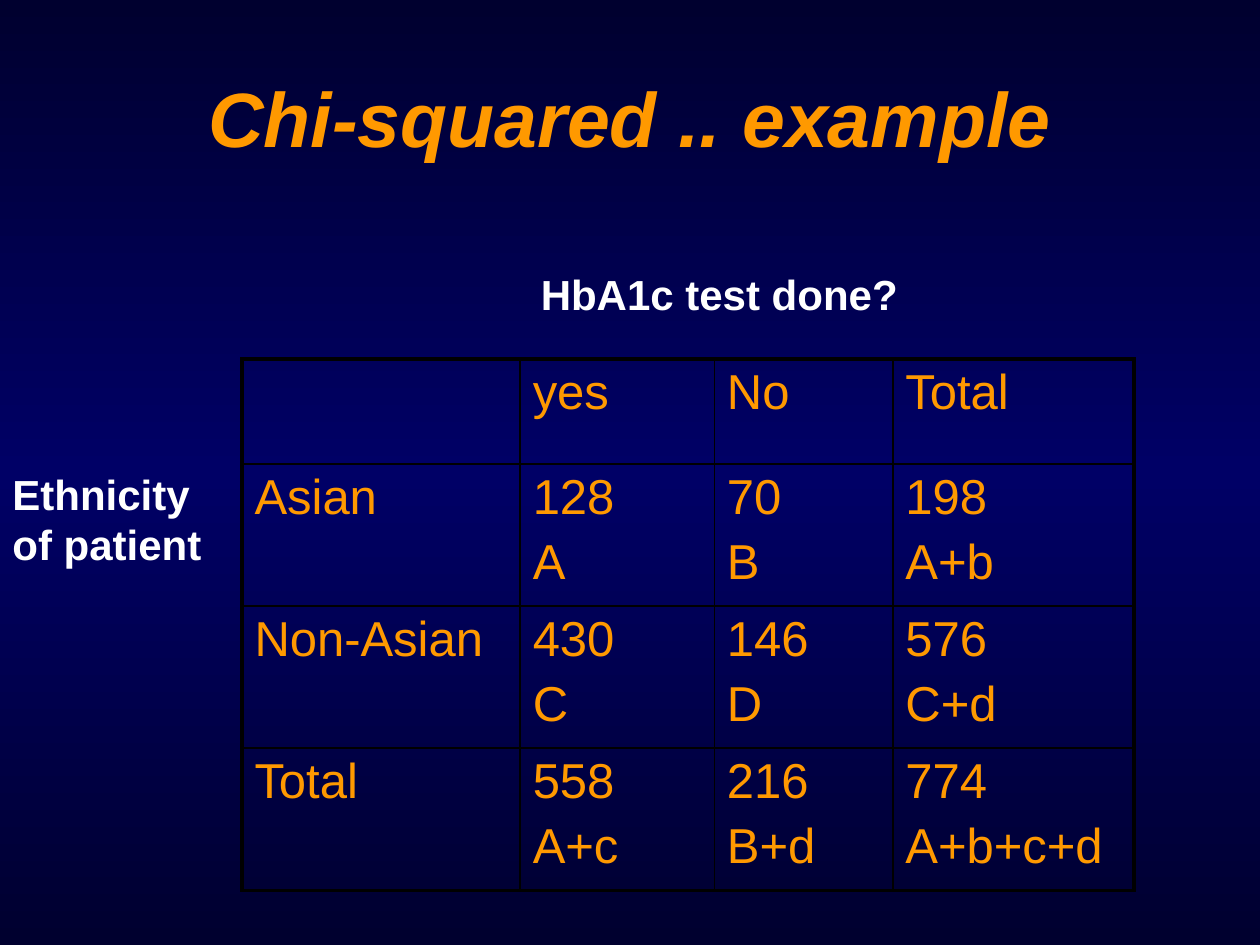
from copy import deepcopy
from dataclasses import dataclass

from lxml.etree import SubElement
from pptx import Presentation
from pptx.dml.color import RGBColor
from pptx.enum.text import MSO_ANCHOR, MSO_AUTO_SIZE, PP_ALIGN
from pptx.oxml.ns import qn
from pptx.slide import Slide
from pptx.table import _Cell
from pptx.text.text import _Paragraph
from pptx.util import Pt


@dataclass(frozen=True)
class TextStyle:
    size: float
    color: str
    bold: bool = False
    italic: bool = False


@dataclass(frozen=True)
class Theme:
    font: str = "Arial"
    title: TextStyle = TextStyle(44, "FF9900", True, True)
    cell: TextStyle = TextStyle(28, "FF9900")
    label: TextStyle = TextStyle(24, "FFFFFF", True)
    edge: str = "00002F"
    middle: str = "000066"
    border: str = "000000"
    outer_border: float = 2.25
    inner_border: float = 1
    letter_gap: float = 5.6


@dataclass(frozen=True)
class Box:
    left: float
    top: float
    width: float
    height: float


@dataclass(frozen=True)
class AxisLabel:
    text: str
    box: Box
    align: PP_ALIGN


THEME = Theme()
TITLE_BOX = Box(36, 21.6, 648, 90)
TABLE_BOX = Box(138.24, 205.2, 509.8, 303.6)
COLUMN_WIDTHS = (159, 111, 102, 137.8)
ROW_HEIGHTS = (60, 81.2, 81.2, 81.2)
COUNTS = (
    ((), ("yes",), ("No",), ("Total",)),
    (("Asian",), ("128", "A"), ("70", "B"), ("198", "A+b")),
    (("Non-Asian",), ("430", "C"), ("146", "D"), ("576", "C+d")),
    (("Total",), ("558", "A+c"), ("216", "B+d"), ("774", "A+b+c+d")),
)
AXIS_LABELS = (
    AxisLabel("HbA1c test done?", Box(276, 150, 270, 36), PP_ALIGN.CENTER),
    AxisLabel("Ethnicity of patient", Box(0, 264, 126, 65), PP_ALIGN.LEFT),
)


def add_run(paragraph: _Paragraph, text: str, style: TextStyle) -> None:
    run = paragraph.add_run()
    run.text = text
    run.font.name = THEME.font
    run.font.size = Pt(style.size)
    run.font.bold = style.bold
    run.font.italic = style.italic
    run.font.color.rgb = RGBColor.from_string(style.color)


def paint_background(slide: Slide) -> None:
    fill = slide.background.fill
    fill.gradient()
    fill.gradient_angle = 90
    stop_list = next(slide.element.iter(qn("a:gsLst")))
    stop_list.append(deepcopy(stop_list[0]))
    colors = (THEME.edge, THEME.middle, THEME.edge)
    for stop, position, color in zip(fill.gradient_stops, (0, 0.5, 1), colors):
        stop.position = position
        stop.color.rgb = RGBColor.from_string(color)


def add_title(slide: Slide, text: str) -> None:
    title = slide.shapes.title
    title.left, title.top = Pt(TITLE_BOX.left), Pt(TITLE_BOX.top)
    title.width, title.height = Pt(TITLE_BOX.width), Pt(TITLE_BOX.height)
    title.text_frame.vertical_anchor = MSO_ANCHOR.MIDDLE
    paragraph = title.text_frame.paragraphs[0]
    paragraph.alignment = PP_ALIGN.CENTER
    add_run(paragraph, text, THEME.title)


def add_axis_label(slide: Slide, label: AxisLabel) -> None:
    box = label.box
    frame = slide.shapes.add_textbox(
        Pt(box.left), Pt(box.top), Pt(box.width), Pt(box.height)
    ).text_frame
    frame.word_wrap = True
    frame.auto_size = MSO_AUTO_SIZE.SHAPE_TO_FIT_TEXT
    frame.paragraphs[0].alignment = label.align
    add_run(frame.paragraphs[0], label.text, THEME.label)


def draw_borders(cell: _Cell, row: int, column: int) -> None:
    outer_sides = {
        "a:lnL": column == 0,
        "a:lnR": column == len(COLUMN_WIDTHS) - 1,
        "a:lnT": row == 0,
        "a:lnB": row == len(ROW_HEIGHTS) - 1,
    }
    properties = cell._tc.get_or_add_tcPr()
    for side, is_outer in outer_sides.items():
        width = THEME.outer_border if is_outer else THEME.inner_border
        line = SubElement(properties, qn(side), w=str(int(Pt(width))))
        solid = SubElement(line, qn("a:solidFill"))
        SubElement(solid, qn("a:srgbClr"), val=THEME.border)


def fill_cell(cell: _Cell, entries: tuple[str, ...]) -> None:
    frame = cell.text_frame
    for index, entry in enumerate(entries):
        paragraph = frame.add_paragraph() if index else frame.paragraphs[0]
        if index:
            paragraph.space_before = Pt(THEME.letter_gap)
        add_run(paragraph, entry, THEME.cell)


def add_contingency_table(slide: Slide) -> None:
    table = slide.shapes.add_table(
        len(ROW_HEIGHTS), len(COLUMN_WIDTHS),
        Pt(TABLE_BOX.left), Pt(TABLE_BOX.top),
        Pt(TABLE_BOX.width), Pt(TABLE_BOX.height),
    ).table
    table.first_row = False
    table.horz_banding = False
    for column, width in zip(table.columns, COLUMN_WIDTHS):
        column.width = Pt(width)
    for row, height in zip(table.rows, ROW_HEIGHTS):
        row.height = Pt(height)
    for row_index, row_entries in enumerate(COUNTS):
        for column_index, entries in enumerate(row_entries):
            cell = table.cell(row_index, column_index)
            draw_borders(cell, row_index, column_index)
            cell.fill.background()
            fill_cell(cell, entries)


def main() -> None:
    presentation = Presentation()
    presentation.slide_width = Pt(720)
    presentation.slide_height = Pt(540)
    slide = presentation.slides.add_slide(presentation.slide_layouts[5])
    paint_background(slide)
    add_title(slide, "Chi-squared .. example")
    add_contingency_table(slide)
    for label in AXIS_LABELS:
        add_axis_label(slide, label)
    presentation.save("out.pptx")


if __name__ == "__main__":
    main()
